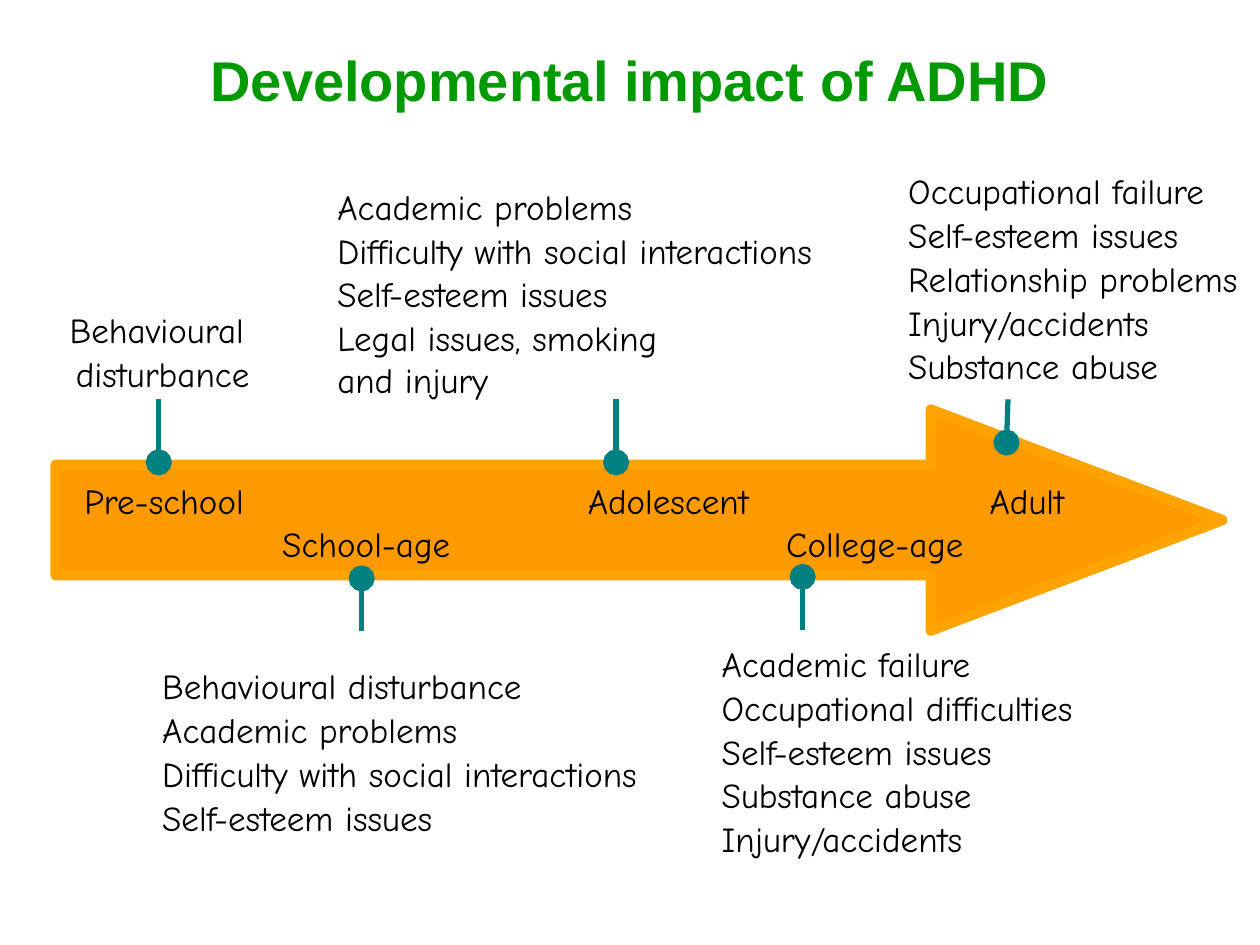
from dataclasses import dataclass

from lxml.etree import SubElement
from pptx import Presentation
from pptx.dml.color import RGBColor
from pptx.enum.shapes import MSO_CONNECTOR, MSO_SHAPE
from pptx.enum.text import MSO_ANCHOR, PP_ALIGN
from pptx.oxml.ns import qn
from pptx.util import Cm, Pt

BODY_FONT = "Comic Neue"
TEAL = "008080"
UPPER_ROW, LOWER_ROW = 9.55, 10.41


@dataclass
class Stage:
    """A life stage with its marker and impacts; lengths in centimetres."""
    name: str
    name_at: tuple[float, float]
    dot: tuple[float, float]
    stem_end: tuple[float, float]
    impacts: list[str]
    impacts_at: tuple[float, float]
    impacts_width: float
    align: PP_ALIGN = PP_ALIGN.LEFT


STAGES = [
    Stage("Pre-school", (1.45, UPPER_ROW), (3.2, 9.32), (3.2, 8.05),
          ["Behavioural ", "disturbance"],
          (1.07, 6.1), 4.42, PP_ALIGN.CENTER),
    Stage("School-age", (5.44, LOWER_ROW), (7.29, 11.66), (7.29, 12.73),
          ["Behavioural disturbance", "Academic problems",
           "Difficulty with social interactions", "Self-esteem issues"],
          (3.02, 13.28), 10.4),
    Stage("Adolescent", (11.6, UPPER_ROW), (12.42, 9.32), (12.42, 8.05),
          ["Academic problems", "Difficulty with social interactions",
           "Self-esteem issues", "Legal issues, smoking\vand injury"],
          (6.55, 3.61), 11),
    Stage("College-age", (15.6, LOWER_ROW), (16.18, 11.63), (16.18, 12.7),
          ["Academic failure", "Occupational difficulties",
           "Self-esteem issues", "Substance abuse", "Injury/accidents"],
          (14.3, 12.83), 10.16),
    Stage("Adult", (19.7, UPPER_ROW), (20.29, 8.92), (20.32, 8.05),
          ["Occupational failure", "Self-esteem issues",
           "Relationship problems", "Injury/accidents", "Substance abuse"],
          (18.06, 3.3), 7.34),
]


def color(value: str) -> RGBColor:
    return RGBColor.from_string(value)


def add_title(slide, text: str) -> None:
    title = slide.shapes.title
    title.left, title.top = Cm(1.9), Cm(0)
    title.width, title.height = Cm(21.6), Cm(3.18)
    title.text_frame.text = text
    title.text_frame.vertical_anchor = MSO_ANCHOR.MIDDLE
    heading = title.text_frame.paragraphs[0]
    heading.alignment = PP_ALIGN.CENTER
    heading.font.name, heading.font.size = "Arial", Pt(32)
    heading.font.bold = True
    heading.font.color.rgb = color("009900")


def add_time_arrow(slide) -> None:
    arrow = slide.shapes.add_shape(
        MSO_SHAPE.RIGHT_ARROW, Cm(1.12), Cm(8.26), Cm(23.52), Cm(4.45))
    arrow.adjustments[0], arrow.adjustments[1] = 0.5, 1.32
    arrow.shadow.inherit = False
    arrow.fill.solid()
    arrow.fill.fore_color.rgb = color("FF9900")
    arrow.line.color.rgb = color("FFA300")
    arrow.line.width = Pt(6)


def add_lines(slide, lines: list[str], at: tuple[float, float], width: float,
              align: PP_ALIGN = PP_ALIGN.LEFT) -> None:
    """Add a text box with one paragraph per line."""
    rows = len(lines) + sum(line.count("\v") for line in lines)
    box = slide.shapes.add_textbox(
        Cm(at[0]), Cm(at[1]), Cm(width), Cm(0.25 + 0.88 * rows))
    frame = box.text_frame
    frame.word_wrap = True
    frame.text = "\n".join(lines)
    for index, paragraph in enumerate(frame.paragraphs):
        if "\n" not in lines[index]:
            paragraph.text = lines[index]
        paragraph.alignment = align
        if index:
            paragraph.space_before = Pt(1)
        paragraph.font.name, paragraph.font.size = BODY_FONT, Pt(20)
        paragraph.font.color.rgb = color("000000")


def add_marker(slide, dot: tuple[float, float],
               stem_end: tuple[float, float]) -> None:
    """Add a stem that starts with a round dot."""
    stem = slide.shapes.add_connector(
        MSO_CONNECTOR.STRAIGHT, *map(Cm, dot + stem_end))
    stem.line.color.rgb = color(TEAL)
    stem.line.width = Pt(3)
    SubElement(stem.line._get_or_add_ln(), qn("a:headEnd"),
               type="oval", w="lg", len="lg")
    SubElement(stem._element.spPr, qn("a:effectLst"))


def main() -> None:
    prs = Presentation()
    prs.slide_width, prs.slide_height = Cm(25.4), Cm(19.05)
    slide = prs.slides.add_slide(prs.slide_layouts[5])
    add_title(slide, "Developmental impact of ADHD")
    add_time_arrow(slide)
    for stage in STAGES:
        add_lines(slide, [stage.name], stage.name_at, 4.4)
        add_marker(slide, stage.dot, stage.stem_end)
        add_lines(slide, stage.impacts, stage.impacts_at,
                  stage.impacts_width, stage.align)
    prs.save("out.pptx")


if __name__ == "__main__":
    main()
